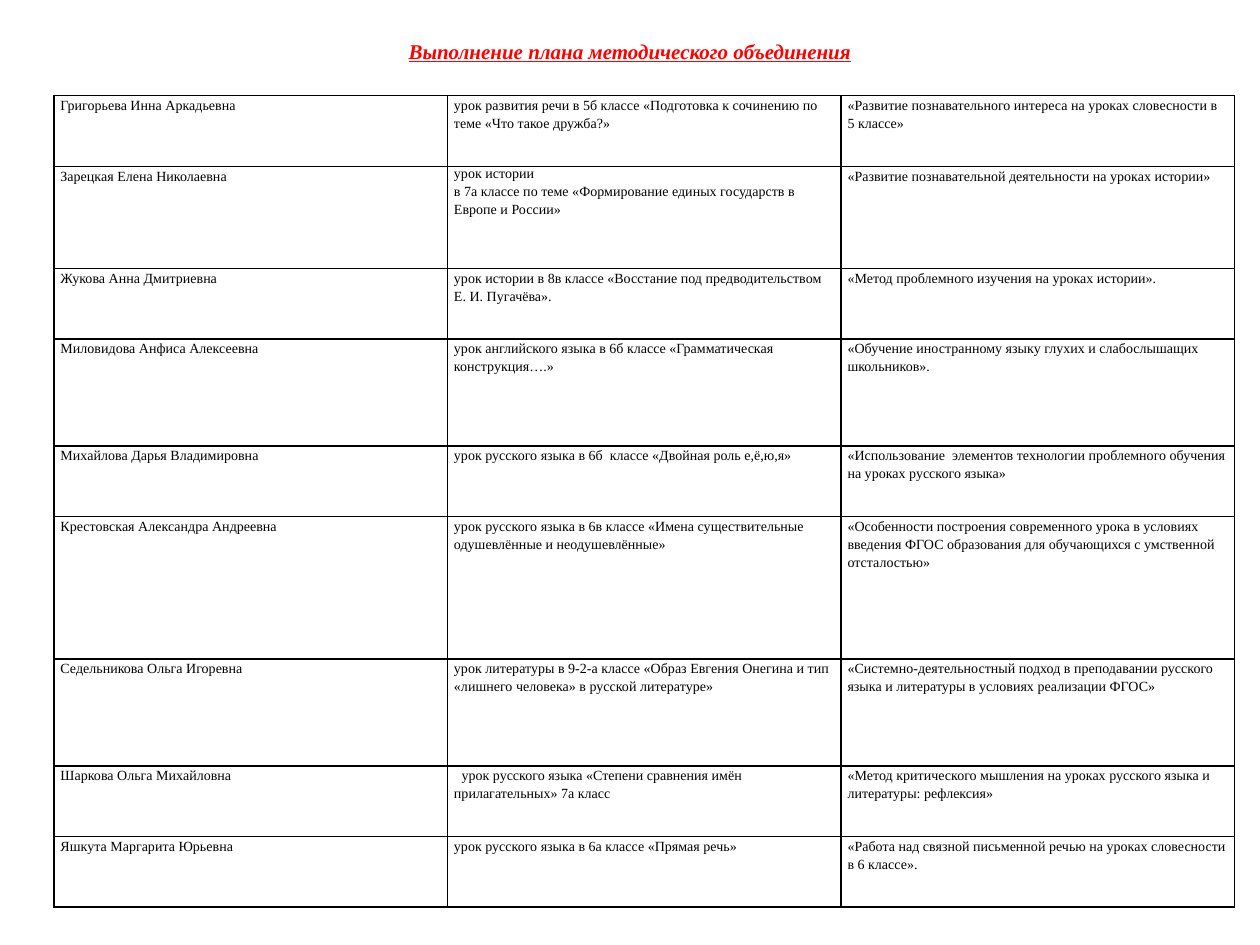
from lxml.etree import SubElement
from pptx import Presentation
from pptx.dml.color import RGBColor
from pptx.enum.text import MSO_ANCHOR, PP_ALIGN
from pptx.oxml.ns import qn
from pptx.util import Inches, Pt

FONT = "Times New Roman"
COLORS = {"title": "FF0000", "text": "000000", "border": "000000"}
SLIDE_WIDTH, SLIDE_HEIGHT = 10, 7.5
TABLE_LEFT, TABLE_TOP, TABLE_WIDTH = 0.43, 0.76, 9.37
NAME_HANG = 0.38
LEAD_INDENT = 0.06
LINE_SPACING = 1.15

TITLE = "Выполнение плана методического объединения"

# Row height, teacher, open lesson (one string per paragraph), topic of the talk
REPORTS = [
    (0.56, "Григорьева Инна Аркадьевна",
     ["урок развития речи в 5б классе «Подготовка к сочинению по теме «Что такое дружба?»"],
     "«Развитие познавательного интереса на уроках словесности в 5 классе»"),
    (0.81, "Зарецкая Елена Николаевна",
     ["урок истории",
      "в 7а классе по теме «Формирование единых государств в Европе и России»"],
     "«Развитие познавательной деятельности на уроках истории»"),
    (0.56, "Жукова Анна Дмитриевна",
     ["урок истории в 8в классе «Восстание под предводительством Е. И. Пугачёва»."],
     "«Метод проблемного изучения на уроках истории»."),
    (0.85, "Миловидова Анфиса Алексеевна",
     ["урок английского языка в 6б классе «Грамматическая конструкция….»"],
     "«Обучение иностранному языку глухих и слабослышащих школьников»."),
    (0.56, "Михайлова Дарья Владимировна",
     ["урок русского языка в 6б  классе «Двойная роль е,ё,ю,я»"],
     "«Использование  элементов технологии проблемного обучения на уроках русского языка»"),
    (1.13, "Крестовская Александра Андреевна",
     ["урок русского языка в 6в классе «Имена существительные одушевлённые и неодушевлённые»"],
     "«Особенности построения современного урока в условиях введения ФГОС образования "
     "для обучающихся с умственной отсталостью»"),
    (0.85, "Седельникова Ольга Игоревна",
     ["урок литературы в 9-2-а классе «Образ Евгения Онегина и тип  «лишнего человека» "
      "в русской литературе»"],
     "«Системно-деятельностный подход в преподавании русского языка и литературы "
     "в условиях реализации ФГОС»"),
    (0.56, "Шаркова Ольга Михайловна",
     ["урок русского языка «Степени сравнения имён прилагательных» 7а класс"],
     "«Метод критического мышления на уроках русского языка и литературы: рефлексия»"),
    (0.56, "Яшкута Маргарита Юрьевна",
     ["урок русского языка в 6а классе «Прямая речь»"],
     "«Работа над связной письменной речью на уроках словесности в 6 классе»."),
]
INDENTED_LESSON = "Шаркова Ольга Михайловна"


def style_font(font, size, color):
    font.name = FONT
    font.size = Pt(size)
    font.color.rgb = RGBColor.from_string(COLORS[color])


def set_indent(paragraph, left, first_line):
    properties = paragraph._p.get_or_add_pPr()
    properties.set("marL", str(Inches(left)))
    properties.set("indent", str(Inches(first_line)))


def set_borders(cell):
    properties = cell._tc.get_or_add_tcPr()
    for side in ("a:lnL", "a:lnR", "a:lnT", "a:lnB"):
        line = SubElement(properties, qn(side), w=str(Pt(1)))
        fill = SubElement(line, qn("a:solidFill"))
        SubElement(fill, qn("a:srgbClr"), val=COLORS["border"])


def fill_cell(cell, texts, left=0, first_line=0):
    cell.margin_left = cell.margin_right = Inches(0.05)
    cell.margin_top = cell.margin_bottom = 0
    cell.vertical_anchor = MSO_ANCHOR.TOP
    set_borders(cell)
    cell.fill.background()
    cell.text = "\n".join(texts)
    for paragraph in cell.text_frame.paragraphs:
        set_indent(paragraph, left, first_line)
        paragraph.line_spacing = LINE_SPACING
        style_font(paragraph.font, 8, "text")
    # An opening line followed by more text is set tighter
    if len(texts) > 1:
        cell.text_frame.paragraphs[0].line_spacing = 1.0


def add_title(slide):
    title = slide.shapes.title
    title.left, title.top = Inches(0.05 * SLIDE_WIDTH), Inches(-0.74)
    title.width, title.height = Inches(0.9 * SLIDE_WIDTH), Inches(2.29)
    title.text_frame.text = TITLE
    title.text_frame.vertical_anchor = MSO_ANCHOR.MIDDLE
    heading = title.text_frame.paragraphs[0]
    heading.alignment = PP_ALIGN.CENTER
    style_font(heading.font, 12, "title")
    heading.font.bold = heading.font.italic = heading.font.underline = True


def add_reports(slide):
    total_height = sum(report[0] for report in REPORTS)
    table = slide.shapes.add_table(
        len(REPORTS), 3, Inches(TABLE_LEFT), Inches(TABLE_TOP),
        Inches(TABLE_WIDTH), Inches(total_height)).table
    table.first_row = table.horz_banding = False
    for row, (height, teacher, lesson, topic) in zip(table.rows, REPORTS):
        row.height = Inches(height)
        teacher_cell, lesson_cell, topic_cell = row.cells
        fill_cell(teacher_cell, [teacher], NAME_HANG, -NAME_HANG)
        lead = LEAD_INDENT if teacher == INDENTED_LESSON else 0
        fill_cell(lesson_cell, lesson, first_line=lead)
        fill_cell(topic_cell, [topic])


def main():
    presentation = Presentation()
    presentation.slide_width = Inches(SLIDE_WIDTH)
    presentation.slide_height = Inches(SLIDE_HEIGHT)
    slide = presentation.slides.add_slide(presentation.slide_layouts[5])
    add_title(slide)
    add_reports(slide)
    presentation.save("out.pptx")


if __name__ == "__main__":
    main()
